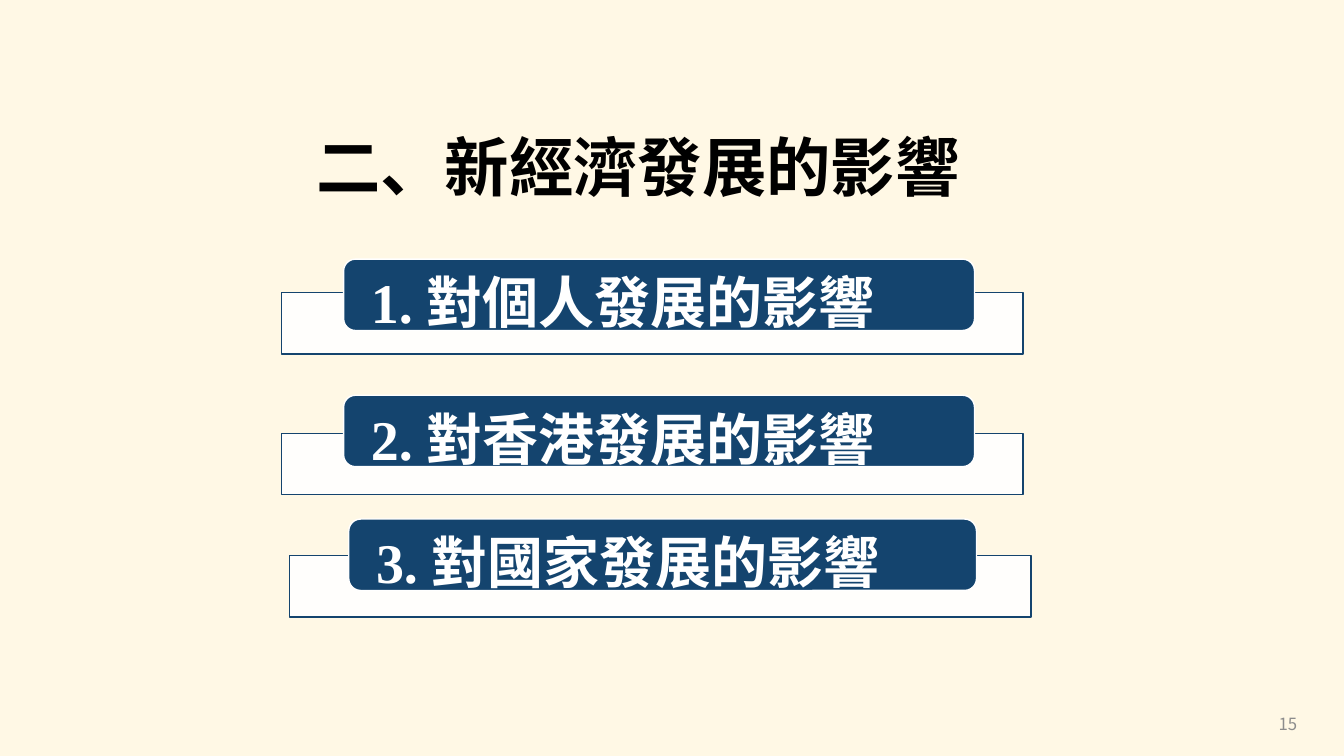
from pptx import Presentation
from pptx.dml.color import RGBColor
from pptx.enum.shapes import MSO_SHAPE as Shape
from pptx.enum.text import MSO_ANCHOR as Anchor, PP_ALIGN as Align
from pptx.oxml.ns import qn
from pptx.util import Cm, Pt
from lxml.etree import SubElement

NAVY, WHITE, CREAM = "14446E", "FFFFFF", "FFF2CC"


def color(hex_string):
    return RGBColor.from_string(hex_string)


def add_panel(page, kind, box, fill, line=None, opacity=100):
    panel = page.shapes.add_shape(kind, *map(Cm, box))
    panel.shadow.inherit = False
    panel.fill.solid()
    panel.fill.fore_color.rgb = color(fill)
    if opacity < 100:
        tint = panel.fill._xPr.find(qn("a:solidFill"))[0]
        SubElement(tint, qn("a:alpha")).set("val", str(opacity * 1000))
    if line:
        panel.line.color.rgb = color(line)
        panel.line.width = Pt(1)
    else:
        panel.line.fill.background()
    return panel


def write(shape, text, *, size, font, ink, bold=False, align=Align.LEFT,
          spacing=1.0, margins=(0.25, 0.13)):
    frame = shape.text_frame
    frame.word_wrap = True
    frame.vertical_anchor = Anchor.MIDDLE
    frame.margin_left = frame.margin_right = Cm(margins[0])
    frame.margin_top = frame.margin_bottom = Cm(margins[1])
    para = frame.paragraphs[0]
    para.alignment = align
    para.line_spacing = spacing
    span = para.add_run()
    span.text = text
    span.font.size = Pt(size)
    span.font.name = font
    span.font.bold = bold
    span.font.color.rgb = color(ink)


def add_heading(page, box, text):
    heading = page.shapes.add_textbox(*map(Cm, box))
    write(heading, text, size=46, font="Roboto", ink="000000", bold=True,
          align=Align.CENTER, spacing=0.9)


def add_page_number(page, box, number):
    label = page.shapes.add_textbox(*map(Cm, box))
    write(label, str(number), size=12, font="Noto Sans CJK SC", ink="8C8C8C",
          align=Align.RIGHT)


def add_topic(page, box, text, tab_offset, tab_width):
    """A white bar filling the box, with a navy tab overlapping its top."""
    left, top, width, height = box
    add_panel(page, Shape.RECTANGLE, box, WHITE, NAVY, opacity=90)
    dx, dy = tab_offset
    tab = add_panel(page, Shape.ROUNDED_RECTANGLE,
                    (left + dx, top - dy, tab_width, 1.8), NAVY, WHITE)
    write(tab, text, size=40, font="Times New Roman", ink=WHITE, bold=True,
          spacing=1.2, margins=(0.6, 0))


def main():
    deck = Presentation()
    deck.slide_width, deck.slide_height = Cm(33.87), Cm(19.05)
    page = deck.slides.add_slide(deck.slide_layouts[6])

    # Backdrop and page number
    add_panel(page, Shape.RECTANGLE, (0, 0, 33.87, 19.05), CREAM, opacity=50)
    add_page_number(page, (25.32, 17.73, 7.62, 1.02), 15)

    # Heading
    add_heading(page, (5.28, 3.4, 21.59, 1.8), "二、新經濟發展的影響")

    # Topics: text, bar left and top, tab offset, tab width
    topics = [
        ("1. 對個人發展的影響", 7.09, 7.37, (1.57, 0.84), 15.9),
        ("2. 對香港發展的影響", 7.09, 10.92, (1.57, 0.96), 15.9),
        ("3. 對國家發展的影響", 7.29, 14.0, (1.5, 0.92), 15.82),
    ]
    for text, left, top, tab_offset, tab_width in topics:
        add_topic(page, (left, top, 18.69, 1.55), text, tab_offset, tab_width)

    deck.save("out.pptx")


if __name__ == "__main__":
    main()
